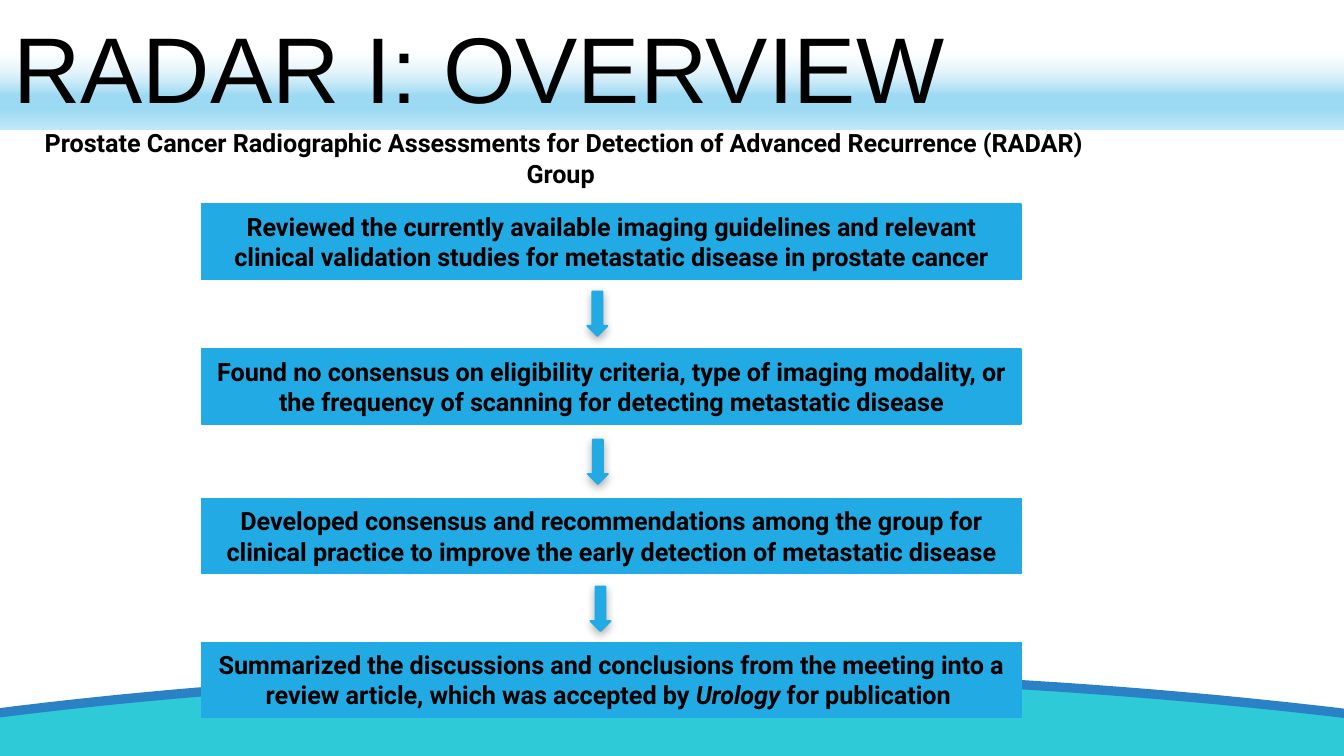
from lxml.etree import SubElement
from pptx import Presentation
from pptx.dml.color import RGBColor
from pptx.enum.shapes import MSO_SHAPE
from pptx.enum.text import MSO_ANCHOR, PP_ALIGN
from pptx.oxml import parse_xml
from pptx.oxml.ns import nsdecls, qn
from pptx.util import Cm, Pt

BLUE = "22AAE4"
BANNER_STOPS = [(35, "F4FBFE", 0), (73, "9CD9F3", 100), (83, "9CD9F3", 100), (97, "BDE6F7", 100)]


def color(value):
    return RGBColor.from_string(value)


def write_text(shape, *parts, size=13.5, font="Roboto", bold=True,
               align=PP_ALIGN.CENTER, anchor=MSO_ANCHOR.MIDDLE):
    """Write one paragraph; a part is a string or a (string, italic) pair."""
    frame = shape.text_frame
    frame.word_wrap = True
    frame.vertical_anchor = anchor
    paragraph = frame.paragraphs[0]
    paragraph.alignment = align
    for part in parts:
        text, italic = (part, False) if isinstance(part, str) else part
        run = paragraph.add_run()
        run.text = text
        run.font.size = Pt(size)
        run.font.name = font
        run.font.bold = bold
        run.font.italic = italic
        run.font.color.rgb = color("000000")


def curve_points(start, control_1, control_2, end, steps=60):
    """Points along a cubic curve."""
    points = []
    for step in range(steps + 1):
        t = step / steps
        weights = ((1 - t) ** 3, 3 * t * (1 - t) ** 2, 3 * t * t * (1 - t), t ** 3)
        corners = (start, control_1, control_2, end)
        points.append(tuple(sum(w * c[axis] for w, c in zip(weights, corners)) for axis in (0, 1)))
    return points


class SlideBuilder:
    def __init__(self, slide):
        self.slide = slide

    def style(self, shape, fill=None, line=None, width=0.75):
        shape.shadow.inherit = False
        if fill:
            shape.fill.solid()
            shape.fill.fore_color.rgb = color(fill)
        else:
            shape.fill.background()
        if line:
            shape.line.color.rgb = color(line)
            shape.line.width = Pt(width)
        else:
            shape.line.fill.background()
        return shape

    def shape(self, kind, left, top, width, height):
        return self.slide.shapes.add_shape(kind, Cm(left), Cm(top), Cm(width), Cm(height))

    def outline(self, points, closed, **style):
        points = [(Cm(x), Cm(y)) for x, y in points]
        builder = self.slide.shapes.build_freeform(*points[0])
        builder.add_line_segments(points[1:], close=closed)
        return self.style(builder.convert_to_shape(), **style)

    def banner(self, left, top, width, height, text):
        shape = self.style(self.shape(MSO_SHAPE.RECTANGLE, left, top, width, height))
        stops = "".join(
            f'<a:gs pos="{position * 1000}"><a:srgbClr val="{value}">'
            f'<a:alpha val="{alpha * 1000}"/></a:srgbClr></a:gs>'
            for position, value, alpha in BANNER_STOPS)
        gradient = parse_xml(
            f'<a:gradFill {nsdecls("a")} rotWithShape="1"><a:gsLst>{stops}</a:gsLst>'
            '<a:lin ang="5400000" scaled="0"/></a:gradFill>')
        properties = shape.element.spPr
        properties.replace(properties.find(qn("a:noFill")), gradient)
        write_text(shape, text, size=50, font="Arial", bold=False, align=PP_ALIGN.LEFT)

    def label(self, left, top, width, height, text):
        box = self.slide.shapes.add_textbox(Cm(left), Cm(top), Cm(width), Cm(height))
        write_text(box, text, anchor=MSO_ANCHOR.TOP)

    def step(self, top, *parts):
        box = self.shape(MSO_SHAPE.RECTANGLE, 3.81, top, 15.49, 1.42)
        write_text(self.style(box, fill=BLUE, line=BLUE), *parts)

    def arrow(self, left, top):
        arrow = self.shape(MSO_SHAPE.DOWN_ARROW, left, top, 0.38, 0.84)
        self.style(arrow, fill=BLUE, line=BLUE, width=1)
        effects = arrow.element.spPr.find(qn("a:effectLst"))
        shadow = SubElement(effects, qn("a:outerShdw"), blurRad=str(Pt(5)), dist=str(Pt(1.8)),
                            dir="5400000", rotWithShape="0")
        black = SubElement(shadow, qn("a:srgbClr"), val="000000")
        SubElement(black, qn("a:alpha"), val="35000")


def main():
    presentation = Presentation()
    presentation.slide_width = Cm(25.4)
    presentation.slide_height = Cm(14.29)
    builder = SlideBuilder(presentation.slides.add_slide(presentation.slide_layouts[6]))

    # Wave along the bottom
    water = curve_points((-0.1, 13.51), (9.25, 12.37), (17.6, 12.65), (25.4, 13.49))
    builder.outline(water + [(25.4, 14.35), (-0.1, 14.35)], True, fill="2ECAD7")
    crest = curve_points((-0.13, 13.49), (9.3, 12.29), (18.87, 12.7), (25.45, 13.49))
    builder.outline(crest, False, line="2A81C6", width=5)

    # Title and subtitle
    builder.banner(0, 0.05, 25.4, 2.39, "RADAR I: OVERVIEW")
    builder.label(0, 2.29, 21.31, 0.84,
                  "Prostate Cancer Radiographic Assessments for Detection of "
                  "Advanced Recurrence (RADAR) Group ")

    # Steps of the flow
    steps = [
        (3.86, ["Reviewed the currently available imaging guidelines and relevant "
                "clinical validation studies for metastatic disease in prostate cancer"]),
        (6.6, ["Found no consensus on eligibility criteria, type of imaging modality, or "
               "the frequency of scanning for detecting metastatic disease"]),
        (9.42, ["Developed consensus and recommendations among the group for "
                "clinical practice to improve the early detection of metastatic disease"]),
        (12.14, ["Summarized the discussions and conclusions from the meeting into a "
                 "review article, which was accepted by ", ("Urology", True),
                 " for publication "]),
    ]
    for top, parts in steps:
        builder.step(top, *parts)

    # Arrows between the steps
    for left, top in [(11.1, 5.51), (11.11, 8.31), (11.16, 11.09)]:
        builder.arrow(left, top)

    presentation.save("out.pptx")


if __name__ == "__main__":
    main()
